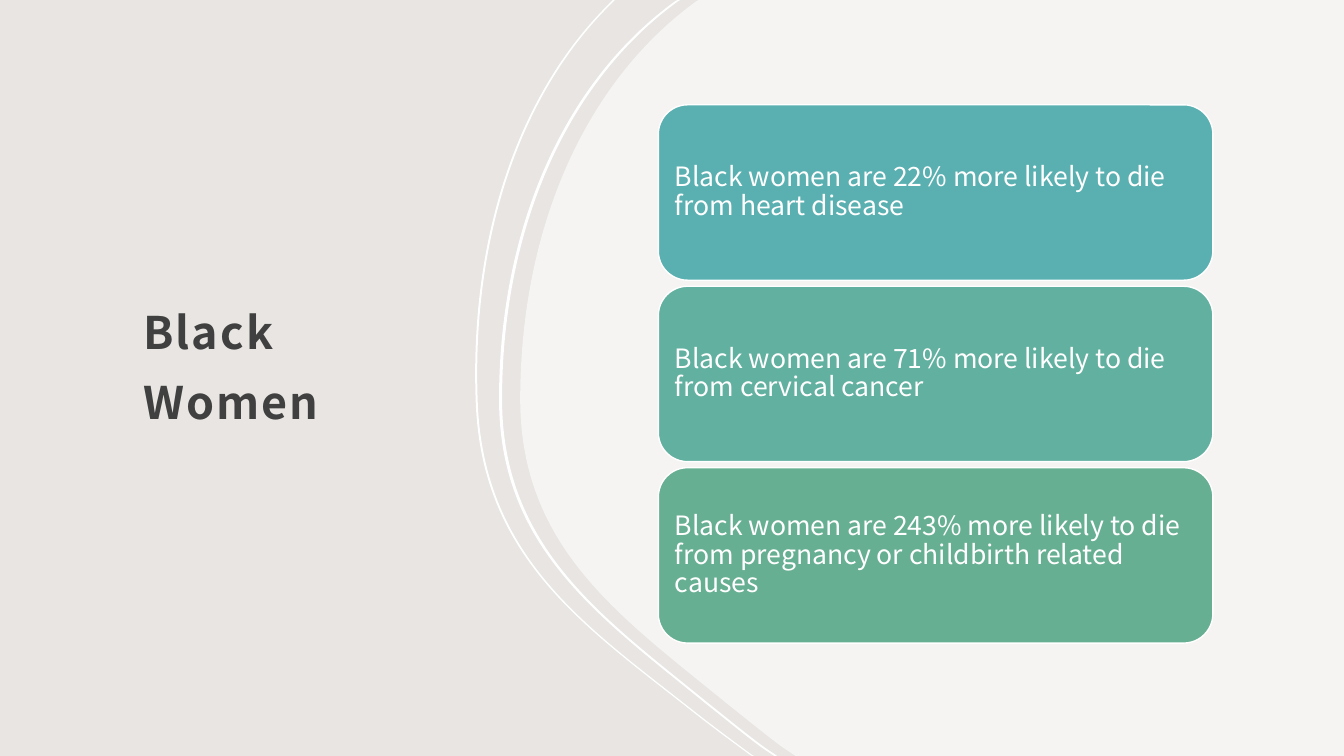
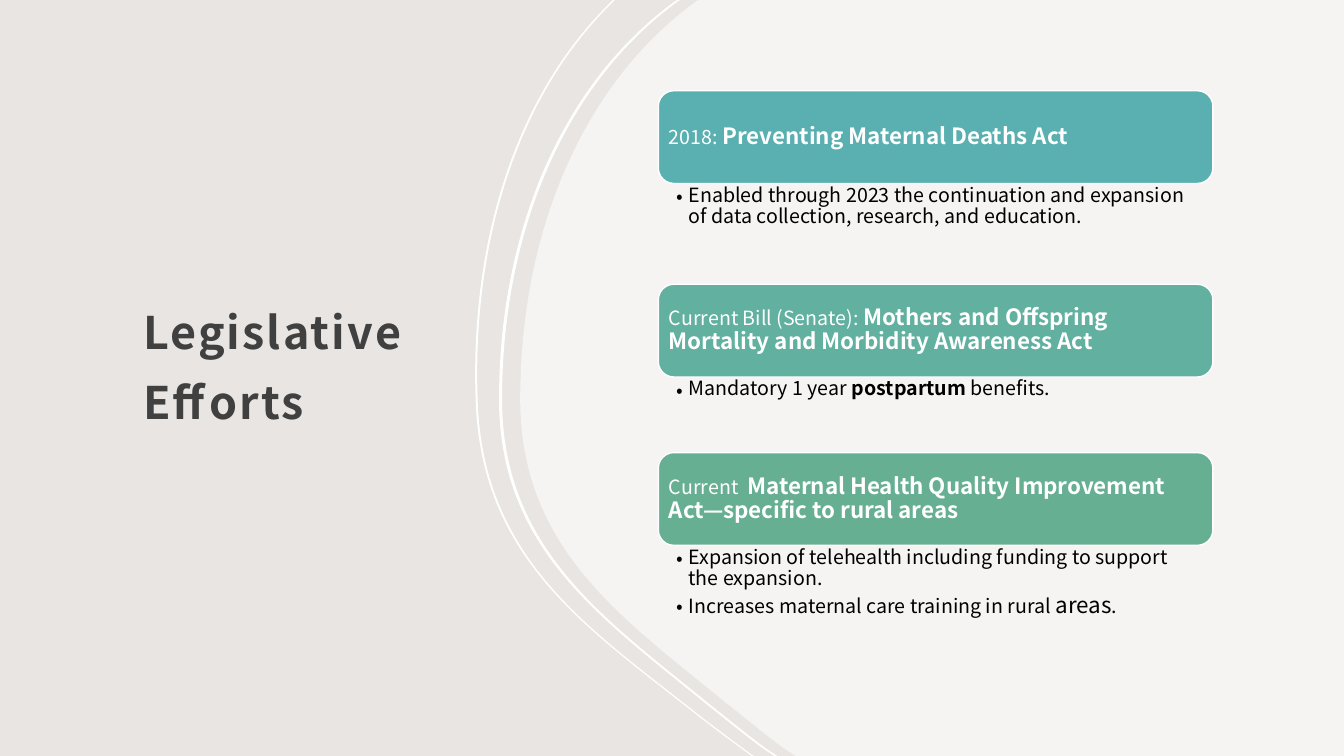
from lxml.etree import SubElement
from pptx import Presentation
from pptx.dml.color import RGBColor
from pptx.enum.shapes import MSO_SHAPE
from pptx.enum.text import MSO_ANCHOR, PP_ALIGN
from pptx.oxml.ns import qn
from pptx.util import Inches, Pt

# Shared look
FONT = "Noto Sans CJK JP"
SAND = RGBColor(0xE8, 0xE5, 0xE2)
WHITE = RGBColor(0xFF, 0xFF, 0xFF)
BLACK = RGBColor(0x00, 0x00, 0x00)
CHARCOAL = RGBColor(0x40, 0x40, 0x40)
CARD_COLORS = (RGBColor(0x5A, 0xB0, 0xB1), RGBColor(0x61, 0xB0, 0xA0),
               RGBColor(0x67, 0xAF, 0x92))

# Grid, in inches
SLIDE_W, SLIDE_H = 13.33, 7.5
TITLE_AREA = (1.3, 1.21, 3.3, 4.68)
CARD_LEFT, CARD_W = 6.53, 5.5
FACT_TOP, FACT_H, FACT_GAP = 1.04, 1.74, 0.06
ACT_TOP, ACT_H = 0.9, 0.92

# Swooping edges: one point is a straight step, three are a Bezier curve
PANEL_EDGE = [
    ((6.93, 0),),
    ((6.91, 0.01),),
    ((5.79, 0.82), (5.16, 2.29), (5.16, 3.96)),
    ((5.16, 5.44), (6.17, 6.13), (7.21, 6.98)),
    ((7.4, 7.13), (7.58, 7.28), (7.77, 7.42)),
    ((7.89, 7.5),),
]
OUTER_EDGE = [
    ((6.08, 0),),
    ((6.05, 0.03),),
    ((5.12, 0.94), (4.65, 2.4), (4.72, 4.02)),
    ((4.79, 5.55), (5.82, 6.23), (6.87, 7.06)),
    ((7.06, 7.21), (7.25, 7.35), (7.44, 7.49)),
    ((7.46, 7.5),),
]
INNER_SHIFT = -0.21

# Content
FACTS = (
    "Black women are 22% more likely to die from heart disease",
    "Black women are 71% more likely to die from cervical cancer",
    "Black women are 243% more likely to die from pregnancy or childbirth related causes",
)
# Each act: lead-in, name, height of its notes, notes as runs of (text, format)
ACTS = (
    ("2018: ", "Preventing Maternal Deaths Act", 1.0,
     [[("Enabled through 2023 the continuation and expansion of data collection, "
        "research, and education.", {})]]),
    ("Current Bill (Senate): ",
     "Mothers and Offspring Mortality and Morbidity Awareness Act", 0.75,
     [[("Mandatory 1 year ", {}), ("postpartum", {"bold": True}), (" benefits.", {})]]),
    ("Current  ", "Maternal Health Quality Improvement Act—specific to rural areas", 1.1,
     [[("Expansion of telehealth including funding to support the expansion.", {})],
      [("Increases maternal care training in rural ", {}), ("areas", {"size": 16}),
       (".", {})]]),
)


def add_run(paragraph, text, size=14, color=WHITE, bold=False, tracking=0):
    for index, line in enumerate(text.split("\n")):
        if index:
            paragraph.add_line_break()
        run = paragraph.add_run()
        run.text = line
        run.font.name = FONT
        run.font.size = Pt(size)
        run.font.bold = bold
        run.font.color.rgb = color
        if tracking:
            run.font._element.set("spc", str(int(tracking * 100)))


def add_bullet(paragraph, indent=0.12):
    properties = paragraph._p.get_or_add_pPr()
    properties.set("marL", str(Inches(indent)))
    properties.set("indent", str(-Inches(indent)))
    SubElement(properties, qn("a:buFont"), typeface=FONT)
    SubElement(properties, qn("a:buChar"), char="•")


def write_text(holder, paragraphs, insets, anchor=MSO_ANCHOR.MIDDLE, line_spacing=0.9,
               space_after=0, bullets=False, **run_format):
    """Fill a shape or text box with paragraphs made of (text, format) runs."""
    frame = holder.text_frame
    frame.word_wrap = True
    frame.vertical_anchor = anchor
    (frame.margin_left, frame.margin_top,
     frame.margin_right, frame.margin_bottom) = map(Inches, insets)
    for index, runs in enumerate(paragraphs):
        paragraph = frame.paragraphs[0] if index == 0 else frame.add_paragraph()
        paragraph.alignment = PP_ALIGN.LEFT
        paragraph.line_spacing = line_spacing
        paragraph.space_after = Pt(space_after)
        if bullets:
            add_bullet(paragraph)
        for text, changes in runs:
            add_run(paragraph, text, **{**run_format, **changes})


def add_text_box(slide, area, paragraphs, **text_format):
    box = slide.shapes.add_textbox(*map(Inches, area))
    write_text(box, paragraphs, **text_format)


def add_card(slide, top, height, color, runs, inset, **run_format):
    card = slide.shapes.add_shape(
        MSO_SHAPE.ROUNDED_RECTANGLE,
        *map(Inches, (CARD_LEFT, top, CARD_W, height)))
    card.shadow.inherit = False
    card.fill.solid()
    card.fill.fore_color.rgb = color
    card.line.color.rgb = WHITE
    card.line.width = Pt(1)
    write_text(card, [runs], insets=(inset,) * 4, **run_format)


def shift_edge(edge, shift):
    return [tuple((x + shift, y) for x, y in step) for step in edge]


def reverse_edge(edge):
    """The same edge, walked from its end to its start."""
    ends = [step[-1] for step in edge]
    walk = [(ends[-1],)]
    for step, begin in reversed(list(zip(edge[1:], ends))):
        walk.append((*step[-2::-1], begin))
    return walk


def add_outline(slide, steps, opacity=100):
    """Closed white freeform; steps of three points become Bezier curves."""
    corners = [tuple(map(Inches, step[-1])) for step in steps]
    builder = slide.shapes.build_freeform(*corners[0])
    builder.add_line_segments(corners[1:], close=True)
    outline = builder.convert_to_shape()
    outline.shadow.inherit = False
    outline.fill.solid()
    outline.fill.fore_color.rgb = WHITE
    outline.line.fill.background()
    properties = outline._element.spPr
    for segment, step in zip(list(properties.iter(qn("a:lnTo"))), steps[1:]):
        if len(step) == 3:
            segment.clear()
            segment.tag = qn("a:cubicBezTo")
            for x, y in step:
                SubElement(segment, qn("a:pt"), x=str(Inches(x) - outline.left),
                           y=str(Inches(y) - outline.top))
    if opacity < 100:
        color = properties.find(qn("a:solidFill"))[0]
        SubElement(color, qn("a:alpha"), val=str(opacity * 1000))


def add_ribbon(slide, edge, width):
    add_outline(slide, edge + reverse_edge(shift_edge(edge, width)))


def add_base_slide(deck, title):
    """Slide with background, curved panel, ribbons and title."""
    slide = deck.slides.add_slide(deck.slide_layouts[6])
    slide.background.fill.solid()
    slide.background.fill.fore_color.rgb = SAND
    add_text_box(slide, TITLE_AREA, [[(title, {})]], insets=(0.12, 0.12, 0.12, 0.1),
                 line_spacing=1.3, size=32, color=CHARCOAL, bold=True, tracking=1.5)
    add_outline(slide, PANEL_EDGE + [((SLIDE_W, SLIDE_H),), ((SLIDE_W, 0),)], opacity=60)
    add_ribbon(slide, OUTER_EDGE, 0.02)
    add_ribbon(slide, shift_edge(PANEL_EDGE, INNER_SHIFT), 0.03)
    return slide


def add_facts(slide):
    for row, (fact, color) in enumerate(zip(FACTS, CARD_COLORS)):
        add_card(slide, FACT_TOP + row * (FACT_H + FACT_GAP), FACT_H, color,
                 [(fact, {})], inset=0.08, size=19)


def add_acts(slide):
    top = ACT_TOP
    for (lead_in, name, notes_height, notes), color in zip(ACTS, CARD_COLORS):
        add_card(slide, top, ACT_H, color,
                 [(lead_in, {}), (name, {"size": 16, "bold": True})], inset=0.06)
        top += ACT_H
        add_text_box(slide, (CARD_LEFT, top, CARD_W, notes_height), notes,
                     insets=(0.18, 0.02, 0.11, 0.02), anchor=MSO_ANCHOR.TOP,
                     space_after=3, bullets=True, color=BLACK)
        top += notes_height


def main():
    deck = Presentation()
    deck.slide_width, deck.slide_height = Inches(SLIDE_W), Inches(SLIDE_H)
    add_facts(add_base_slide(deck, "Black Women"))
    add_acts(add_base_slide(deck, "Legislative \nEfforts"))
    deck.save("out.pptx")


if __name__ == "__main__":
    main()
